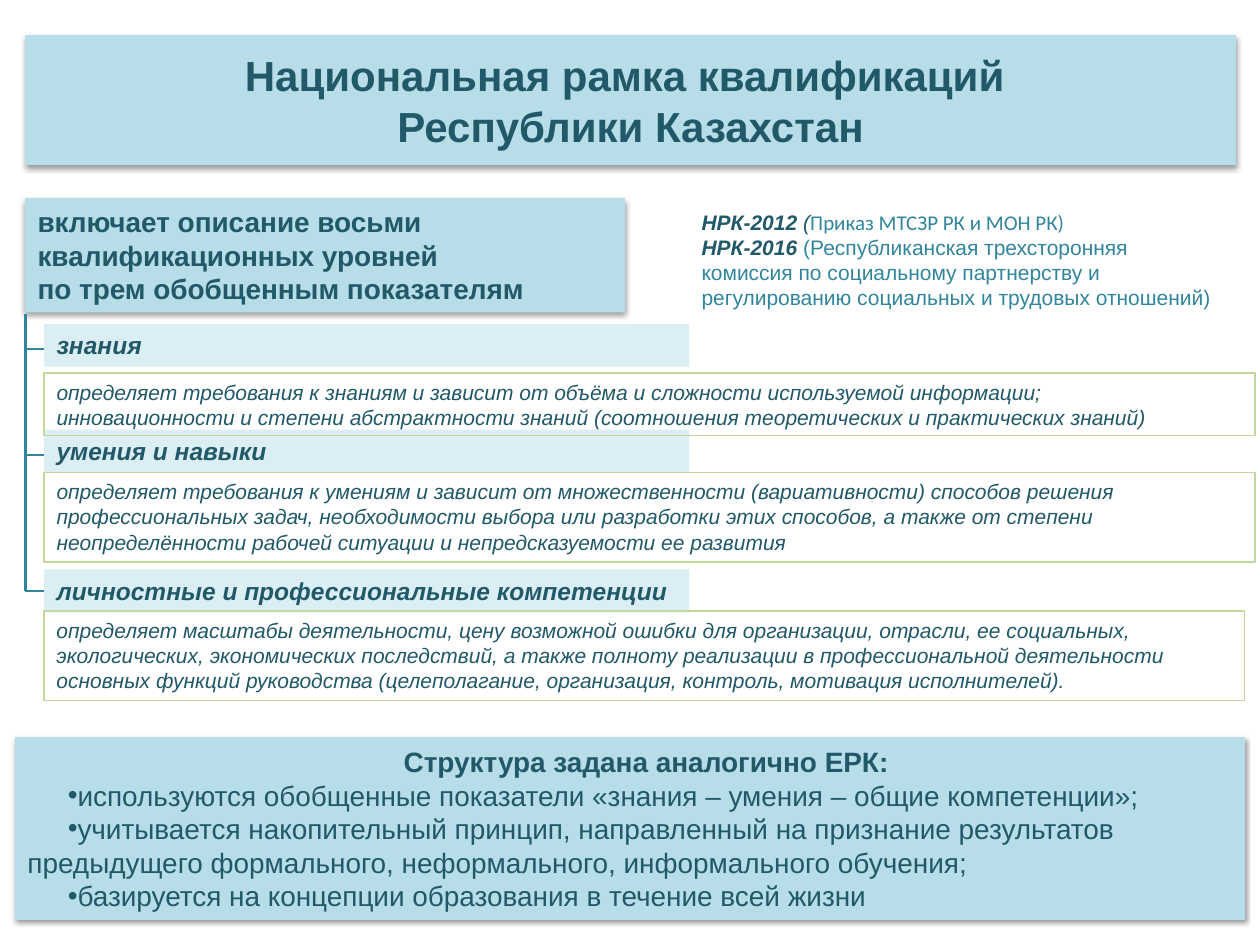
"""Build the slide on the national qualifications framework of Kazakhstan."""
from lxml import etree
from pptx import Presentation
from pptx.dml.color import RGBColor
from pptx.enum.shapes import MSO_CONNECTOR, MSO_SHAPE
from pptx.enum.text import MSO_ANCHOR, PP_ALIGN
from pptx.oxml.ns import qn
from pptx.util import Inches, Pt

RECTANGLE = MSO_SHAPE.RECTANGLE
STRAIGHT = MSO_CONNECTOR.STRAIGHT
LEFT, CENTER = PP_ALIGN.LEFT, PP_ALIGN.CENTER
TOP, MIDDLE = MSO_ANCHOR.TOP, MSO_ANCHOR.MIDDLE
DARK, TEAL, PANEL, LABEL, OUTLINE = "215968", "31859C", "B7DEE8", "DBEEF4", "C3D69B"


def color(value):
    return RGBColor.from_string(value)


def add_box(position, paragraphs, size, fill=None, outline=None, anchor=TOP, align=LEFT):
    shape = slide.shapes.add_shape(RECTANGLE, *[Inches(length) for length in position])
    shape.shadow.inherit = False
    if fill:
        shape.fill.solid()
        shape.fill.fore_color.rgb = color(fill)
    else:
        shape.fill.background()
    if outline:
        shape.line.color.rgb = color(outline)
        shape.line.width = Pt(0.75)
    else:
        shape.line.fill.background()
    frame = shape.text_frame
    frame.word_wrap = True
    frame.vertical_anchor = anchor
    for index, runs in enumerate(paragraphs):
        paragraph = frame.paragraphs[0] if index == 0 else frame.add_paragraph()
        paragraph.alignment = align
        for text, bold, italic, text_color, font_name in runs:
            run = paragraph.add_run()
            run.text = text
            run.font.size = Pt(size)
            run.font.bold = bold
            run.font.italic = italic
            run.font.name = font_name
            run.font.color.rgb = color(text_color)
    return shape


presentation = Presentation()
presentation.slide_width = Inches(10)
presentation.slide_height = Inches(7.5)
slide = presentation.slides.add_slide(presentation.slide_layouts[6])

title_lines = ["Национальная рамка квалификаций ", "Республики Казахстан"]
structure_heading = "Структура задана аналогично ЕРК: "
structure_points = [
    "используются обобщенные показатели «знания – умения – общие компетенции»;",
    "учитывается накопительный принцип, направленный на признание результатов "
    "предыдущего формального, неформального, информального обучения;",
    "базируется на концепции образования в течение всей жизни",
]
scope_lines = [
    "включает описание восьми квалификационных уровней",
    "по трем обобщенным показателям",
]

title = add_box(
    (0.2, 0.28, 9.61, 1.03),
    [[(line, True, False, DARK, "Arial")] for line in title_lines],
    24, PANEL, anchor=MIDDLE, align=CENTER,
)
structure = add_box(
    (0.12, 5.85, 9.76, 1.45),
    [[(structure_heading, True, False, DARK, "Arial")]]
    + [[(point, False, False, DARK, "Arial")] for point in structure_points],
    16, PANEL, anchor=MIDDLE,
)
scope = add_box(
    (0.2, 1.57, 4.76, 0.91),
    [[(line, True, False, DARK, "Arial")] for line in scope_lines],
    16, PANEL, anchor=MIDDLE,
)

for panel in (title, structure, scope):
    effects = panel._element.spPr.find(qn("a:effectLst"))
    shadow = etree.SubElement(
        effects, qn("a:outerShdw"),
        blurRad="40000", dist="20000", dir="5400000", rotWithShape="0",
    )
    shadow_color = etree.SubElement(shadow, qn("a:srgbClr"), val="000000")
    etree.SubElement(shadow_color, qn("a:alpha"), val="38000")

for index, paragraph in enumerate(structure.text_frame.paragraphs):
    properties = paragraph._p.get_or_add_pPr()
    properties.set("marL", "0")
    properties.set("indent", str(Inches(0.32)))
    if index == 0:
        paragraph.alignment = CENTER
    else:
        etree.SubElement(properties, qn("a:buFont"), typeface="Arial")
        etree.SubElement(properties, qn("a:buChar"), char="•")

add_box(
    (5.47, 1.61, 4.33, 0.91),
    [
        [
            ("НРК-2012", True, True, DARK, "Arial"),
            (" (", False, True, DARK, "Arial"),
            ("Приказ МТСЗР РК и МОН РК)", False, False, TEAL, "Calibri"),
        ],
        [
            ("НРК-2016 ", True, True, DARK, "Arial"),
            ("(Республиканская трехсторонняя комиссия по социальному партнерству и "
             "регулированию социальных и трудовых отношений)", False, False, TEAL, "Arial"),
        ],
    ],
    12,
)

labels = [
    (2.57, "знания"),
    (3.41, "умения и навыки"),
    (4.52, "личностные и профессиональные компетенции"),
]
label_boxes = [
    add_box((0.35, top, 5.12, 0.34), [[(text, True, True, DARK, "Arial")]], 14, LABEL)
    for top, text in labels
]

descriptions = [
    (2.96, 9.61, 0.5, [
        "определяет требования к знаниям и зависит от объёма и сложности "
        "используемой информации;",
        "инновационности и степени абстрактности знаний (соотношения теоретических "
        "и практических знаний)",
    ]),
    (3.75, 9.61, 0.71, [
        "определяет требования к умениям и зависит от множественности (вариативности) "
        "способов решения профессиональных задач, необходимости выбора или разработки "
        "этих способов, а также от степени неопределённости рабочей ситуации и "
        "непредсказуемости ее развития",
    ]),
    (4.85, 9.53, 0.71, [
        "определяет масштабы деятельности, цену возможной ошибки для организации, "
        "отрасли, ее социальных, экологических, экономических последствий, а также "
        "полноту реализации в профессиональной деятельности основных функций "
        "руководства (целеполагание, организация, контроль, мотивация исполнителей).",
    ]),
]
for top, width, height, lines in descriptions:
    add_box(
        (0.35, top, width, height),
        [[(line, False, True, DARK, "Arial")] for line in lines],
        12, outline=OUTLINE,
    )

bracket_lines = [
    (0.2, 2.49, 0.2, 4.69),
    (0.2, 2.77, 0.35, 2.77),
    (0.2, 3.61, 0.35, 3.61),
    (0.2, 4.69, 0.35, 4.69),
]
for ends in bracket_lines:
    connector = slide.shapes.add_connector(STRAIGHT, *[Inches(length) for length in ends])
    connector.line.color.rgb = color(TEAL)
    connector.line.width = Pt(1.5)
    etree.SubElement(connector._element.spPr, qn("a:effectLst"))
connector.end_connect(label_boxes[-1], 1)

presentation.save("out.pptx")
